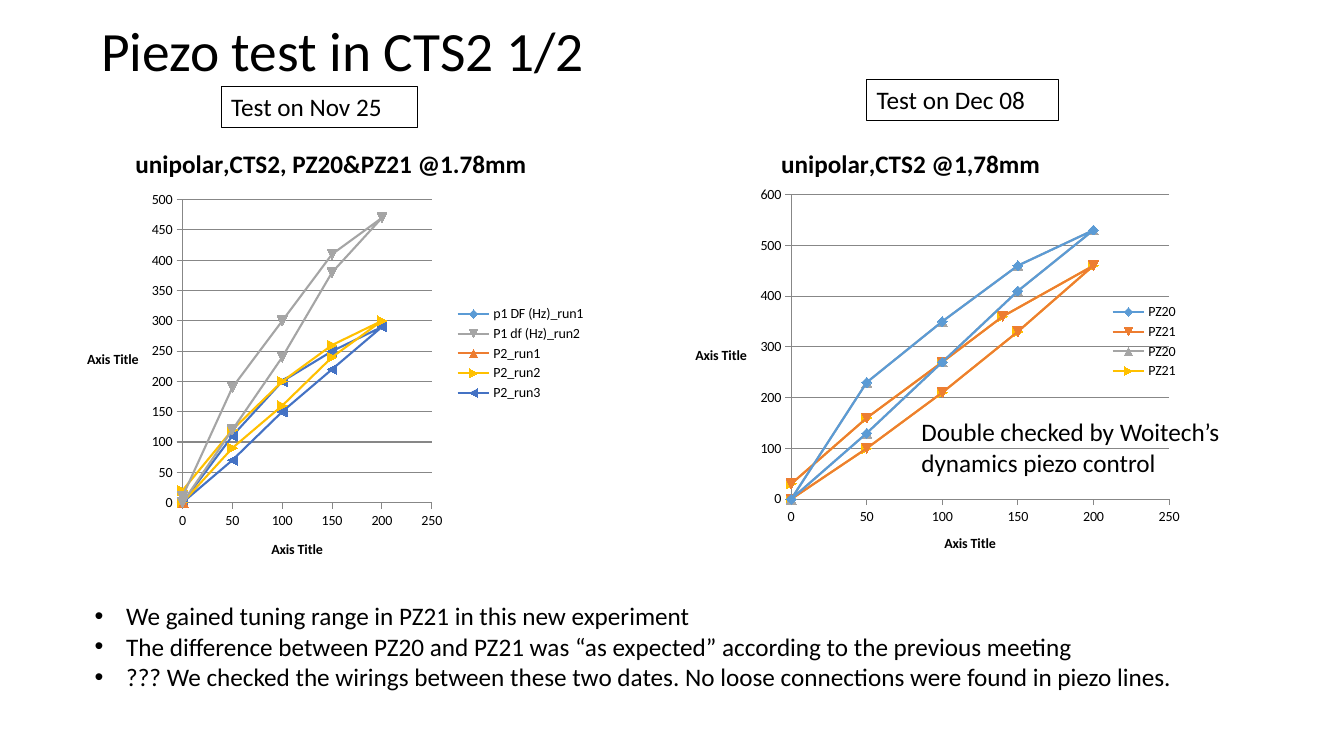
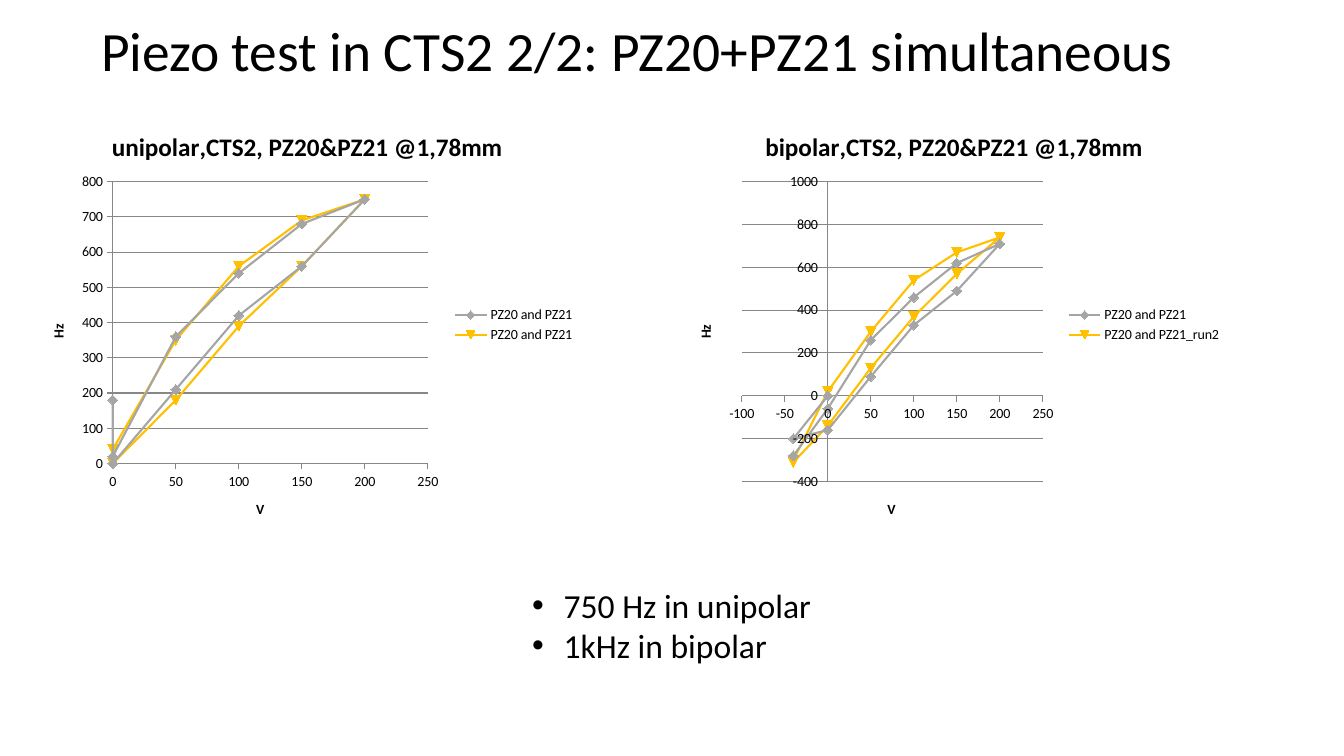
from dataclasses import dataclass

from lxml import etree
from pptx import Presentation
from pptx.chart.data import XyChartData
from pptx.dml.color import RGBColor
from pptx.enum.chart import XL_CHART_TYPE, XL_LEGEND_POSITION, XL_TICK_MARK
from pptx.enum.text import MSO_ANCHOR, PP_ALIGN
from pptx.oxml.ns import qn
from pptx.util import Pt

SCATTER = XL_CHART_TYPE.XY_SCATTER_LINES
LEGEND_RIGHT = XL_LEGEND_POSITION.RIGHT
TICK_OUT = XL_TICK_MARK.OUTSIDE
MIDDLE, LEFT = MSO_ANCHOR.MIDDLE, PP_ALIGN.LEFT
TITLE_ONLY = 5


@dataclass(frozen=True)
class Theme:
    font: str = "Calibri"
    text: str = "000000"
    grid: str = "878787"
    blue: str = "5B9BD5"
    orange: str = "ED7D31"
    gray: str = "A5A5A5"
    yellow: str = "FFC000"
    navy: str = "4472C4"
    title_size: float = 39.6
    large: float = 24
    body: float = 18
    chart_text: float = 10
    series_line: float = 1.5
    thin_line: float = 0.75


T = Theme()
TITLE_BOX = (65, 14.5, 828, 48)
BULLET_INDENT = 22.5
LOOP = [0, 50, 100, 150, 200, 150, 100, 50, 0]
PZ20 = (LOOP, [0, 130, 270, 410, 530, 460, 350, 230, 0])
PZ21 = ([0, 50, 100, 150, 200, 140, 100, 50, 0],
        [0, 100, 210, 330, 460, 360, 270, 160, 30])
IDLE = ([1], [0])

# Each chart: title, plot area fractions, axis titles, axis ranges, series
NOV_TEST = dict(
    title="unipolar,CTS2, PZ20&PZ21 @1.78mm", plot=(0.22, 0.16, 0.47, 0.67),
    axis_titles=("Axis Title", "Axis Title"), upright=True,
    x_range=(0, 250, 50), y_range=(0, 500, 50),
    series=[
        ("p1 DF (Hz)_run1", T.blue, IDLE),
        ("P1 df (Hz)_run2", T.gray, (LOOP, [0, 120, 240, 380, 470, 410, 300, 190, 10])),
        ("P2_run1", T.orange, IDLE),
        ("P2_run2", T.yellow, (LOOP, [0, 90, 160, 240, 300, 260, 200, 120, 20])),
        ("P2_run3", T.navy, (LOOP, [0, 70, 150, 220, 290, 250, 200, 110, 0])),
    ])
DEC_TEST = dict(
    title="unipolar,CTS2 @1,78mm", plot=(0.285, 0.157, 0.68, 0.711),
    axis_titles=("Axis Title", "Axis Title"), upright=True,
    x_range=(0, 250, 50), y_range=(0, 600, 100),
    series=[("PZ20", T.blue, PZ20), ("PZ21", T.orange, PZ21),
            ("PZ20", T.gray, PZ20), ("PZ21", T.yellow, PZ21)])
UNIPOLAR = dict(
    title="unipolar,CTS2, PZ20&PZ21 @1,78mm", plot=(0.15, 0.166, 0.567, 0.658),
    axis_titles=("V", "Hz"), upright=False,
    x_range=(0, 250, 50), y_range=(0, 800, 100),
    series=[
        ("PZ20 and PZ21", T.gray,
         (LOOP + [0, 0], [0, 210, 420, 560, 750, 680, 540, 360, 20, 0, 180])),
        ("PZ20 and PZ21", T.yellow, (LOOP, [0, 180, 390, 560, 750, 690, 560, 350, 40])),
    ])
BIPOLAR_LOOP = [-40] + LOOP + [-40]
BIPOLAR = dict(
    title="bipolar,CTS2, PZ20&PZ21 @1,78mm", plot=(0.118, 0.166, 0.542, 0.7),
    axis_titles=("V", "Hz"), upright=False,
    x_range=(-100, 250, 50), y_range=(-400, 1000, 200),
    series=[
        ("PZ20 and PZ21", T.gray,
         ([0] + BIPOLAR_LOOP,
          [0, -200, -160, 90, 330, 490, 710, 620, 460, 260, -60, -280])),
        ("PZ20 and PZ21_run2", T.yellow,
         (BIPOLAR_LOOP, [-310, -140, 130, 370, 570, 740, 670, 540, 300, 20, -300])),
    ])


def rgb(color):
    return RGBColor.from_string(color)


def points(box):
    return [Pt(v) for v in box]


def format_font(font, size, bold=False):
    for name, value in dict(name=T.font, size=Pt(size), bold=bold).items():
        setattr(font, name, value)
    font.color.rgb = rgb(T.text)


def format_line(line, color, width):
    line.color.rgb = rgb(color)
    line.width = Pt(width)


def add_bullet(p):
    props = p._p.get_or_add_pPr()
    indent = Pt(BULLET_INDENT)
    props.set("marL", str(indent))
    props.set("indent", str(-indent))
    etree.SubElement(props, qn("a:buFont"), typeface="Arial")
    etree.SubElement(props, qn("a:buChar"), char="•")


def add_text(s, box, lines, size=T.body, bullets=False, framed=False):
    sp = s.shapes.add_textbox(*points(box))
    tf = sp.text_frame
    tf.word_wrap = True
    for i, line in enumerate(lines):
        p = tf.paragraphs[0] if i == 0 else tf.add_paragraph()
        r = p.add_run()
        r.text = line
        format_font(r.font, size)
        if bullets:
            add_bullet(p)
    if framed:
        format_line(sp.line, T.text, T.thin_line)


def titled_slide(prs, title):
    s = prs.slides.add_slide(prs.slide_layouts[TITLE_ONLY])
    sp = s.shapes.title
    sp.left, sp.top, sp.width, sp.height = points(TITLE_BOX)
    tf = sp.text_frame
    tf.text = title
    tf.word_wrap = True
    tf.vertical_anchor = MIDDLE
    p = tf.paragraphs[0]
    p.alignment, p.line_spacing = LEFT, 0.9
    format_font(p.runs[0].font, T.title_size)
    return s


def set_plot_area(chart, fractions):
    """Place the inner plot area as fractions of the chart's box."""
    area = chart._chartSpace.find(".//" + qn("c:plotArea"))
    layout = area.find(qn("c:layout"))
    if layout is None:
        layout = etree.Element(qn("c:layout"))
        area.insert(0, layout)
    manual = etree.SubElement(layout, qn("c:manualLayout"))
    settings = [("layoutTarget", "inner"), ("xMode", "edge"), ("yMode", "edge")]
    settings += zip("xywh", fractions)
    for tag, value in settings:
        etree.SubElement(manual, qn("c:" + tag), val=str(value))


def format_title(title, text, size):
    tf = title.text_frame
    tf.text = text
    format_font(tf.paragraphs[0].runs[0].font, size, bold=True)


def format_axis(axis, title, limits, rotation):
    low, high, step = limits
    settings = dict(minimum_scale=low, maximum_scale=high, major_unit=step,
                    major_tick_mark=TICK_OUT, has_major_gridlines=False)
    for name, value in settings.items():
        setattr(axis, name, value)
    format_line(axis.format.line, T.grid, T.thin_line)
    format_title(axis.axis_title, title, T.chart_text)
    body = axis.axis_title._element.find(".//" + qn("a:bodyPr"))
    body.set("rot", str(rotation))
    body.set("vert", "horz")


def add_scatter(s, box, title, plot, axis_titles, upright, x_range, y_range, series):
    data = XyChartData()
    for name, _, (volts, shifts) in series:
        entry = data.add_series(name)
        for x, y in zip(volts, shifts):
            entry.add_data_point(x, y)
    chart = s.shapes.add_chart(SCATTER, *points(box), data).chart
    format_font(chart.font, T.chart_text)
    chart.has_title = chart.has_legend = True
    format_title(chart.chart_title, title, T.body)
    chart.legend.position = LEGEND_RIGHT
    chart.legend.include_in_layout = False
    format_axis(chart.category_axis, axis_titles[0], x_range, 0)
    format_axis(chart.value_axis, axis_titles[1], y_range, 0 if upright else -5400000)
    chart.value_axis.has_major_gridlines = True
    format_line(chart.value_axis.major_gridlines.format.line, T.grid, T.thin_line)
    chart.plots[0].vary_by_categories = False
    for line, (_, color, _) in zip(chart.plots[0].series, series):
        line.smooth = False
        format_line(line.format.line, color, T.series_line)
        line.marker.size = 7
        fill = line.marker.format.fill
        fill.solid()
        fill.fore_color.rgb = rgb(color)
        format_line(line.marker.format.line, color, T.thin_line)
    set_plot_area(chart, plot)


def build_comparison(prs):
    s = titled_slide(prs, "Piezo test in CTS2 1/2")
    add_scatter(s, (47, 91, 379, 323), **NOV_TEST)
    add_text(s, (158, 62, 140, 29), ["Test on Nov 25"], framed=True)
    add_scatter(s, (452, 91, 397, 306), **DEC_TEST)
    add_text(s, (619, 57, 137, 29), ["Test on Dec 08"], framed=True)
    add_text(s, (651, 294, 256, 51),
             ["Double checked by Woitech’s dynamics piezo control"])
    add_text(s, (60.5, 425.5, 846, 73), [
        "We gained tuning range in PZ21 in this new experiment",
        "The difference between PZ20 and PZ21 was “as expected” according to the "
        "previous meeting",
        "??? We checked the wirings between these two dates. No loose connections "
        "were found in piezo lines.",
    ], bullets=True)


def build_simultaneous(prs):
    s = titled_slide(prs, "Piezo test in CTS2 2/2: PZ20+PZ21 simultaneous")
    add_text(s, (373, 414, 259, 65.5), ["750 Hz in unipolar", "1kHz in bipolar"],
             size=T.large, bullets=True)
    for left, chart in ((21, UNIPOLAR), (483, BIPOLAR)):
        add_scatter(s, (left, 79, 397, 306), **chart)


def main():
    prs = Presentation()
    prs.slide_width, prs.slide_height = Pt(960), Pt(540)
    build_comparison(prs)
    build_simultaneous(prs)
    prs.save("out.pptx")


if __name__ == "__main__":
    main()
